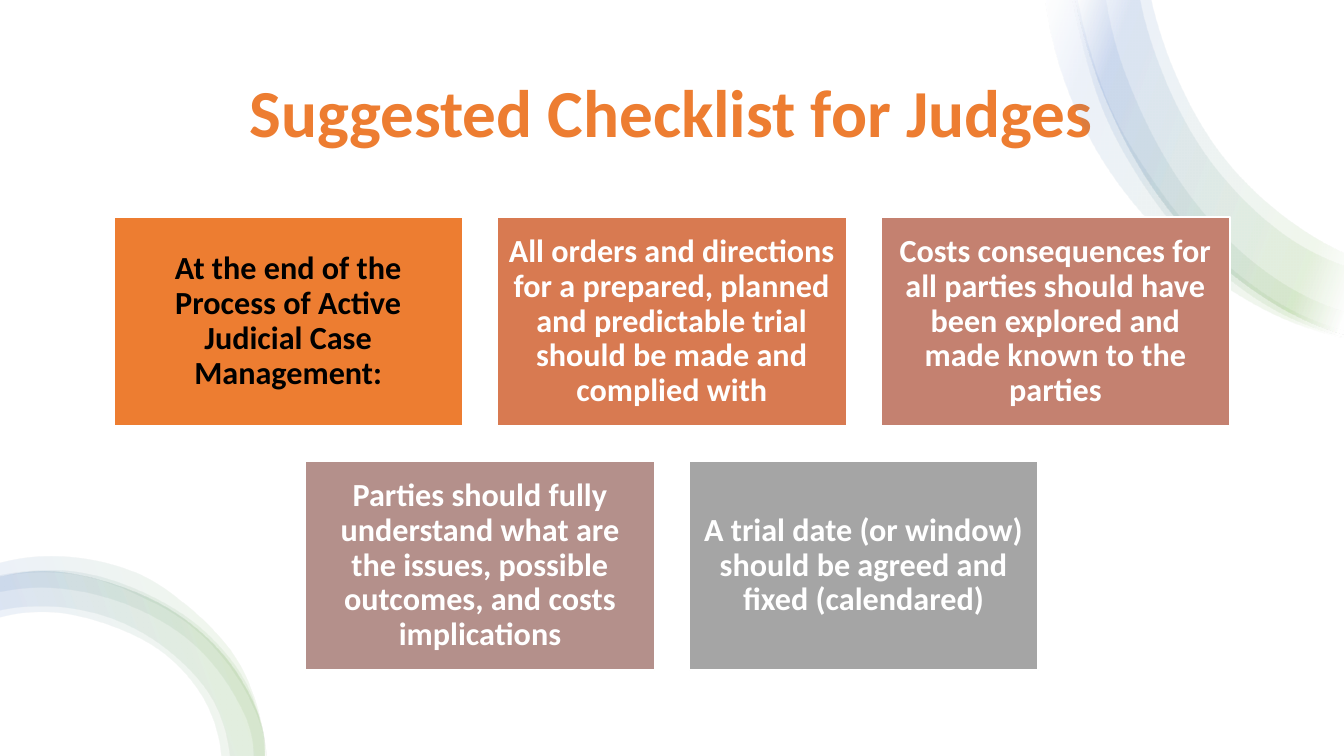
from lxml import etree
from pptx import Presentation
from pptx.dml.color import RGBColor
from pptx.enum.shapes import MSO_SHAPE
from pptx.enum.text import MSO_ANCHOR, PP_ALIGN
from pptx.oxml import parse_xml
from pptx.oxml.ns import nsdecls, qn
from pptx.util import Pt

WHITE = RGBColor(0xFF, 0xFF, 0xFF)
BLACK = RGBColor(0x00, 0x00, 0x00)
ORANGE = RGBColor(0xED, 0x7D, 0x31)
TERRACOTTA = RGBColor(0xD8, 0x7A, 0x51)
ROSE = RGBColor(0xC4, 0x81, 0x70)
MAUVE = RGBColor(0xB4, 0x90, 0x8B)
GREY = RGBColor(0xA5, 0xA5, 0xA5)
GREEN = RGBColor(0x70, 0xAD, 0x47)
BLUE = RGBColor(0x44, 0x72, 0xC4)

SLIDE_WIDTH, SLIDE_HEIGHT = 960, 540
CARD_WIDTH, CARD_HEIGHT, CARD_GAP = 249.1, 149.4, 24.9
CARDS_TOP = 155
BAND_STOPS = [(2, WHITE), (16, GREEN), (85, BLUE), (100, WHITE)]

# Each band is an outer edge and the inner edge that leads back, in points
CORNER_OUTER = [(960, 239), (942, 233), (881, 197), (830, 144), (792, 77), (768, 0)]
CORNER_BANDS = [
    ([(960, 241), (923, 230), (879, 207), (839, 176), (804, 138), (776, 94),
      (750, 19), (747, 0)],
     [(770, 0), (779, 37), (796, 83), (821, 125), (850, 163), (886, 197),
      (926, 223), (960, 236)]),
    (CORNER_OUTER, [(822, 0), (834, 40), (878, 118), (941, 171), (960, 181)]),
    ([(960, 240), (921, 226), (845, 168), (815, 129), (791, 86), (769, 14), (766, 0)],
     [(790, 0), (797, 32), (813, 75), (860, 152), (892, 184), (929, 209), (960, 222)]),
    (CORNER_OUTER, [(814, 0), (826, 42), (871, 124), (937, 180), (960, 190)]),
]
FOOT_OUTER = [(189, 540), (188.6, 529), (170, 482), (133, 443), (84, 418), (29, 408), (0, 412)]
FOOT_BANDS = [
    (FOOT_OUTER, [(0, 441), (29, 437), (77, 446), (120, 469), (148, 504), (158, 540)]),
    (FOOT_OUTER, [(0, 436), (29, 433), (78, 441), (122, 466), (153, 502), (164, 540)]),
    ([(189, 540), (186, 518), (178, 493), (146, 451), (102, 423), (50, 408),
      (22, 408), (0, 411)],
     [(0, 423), (24, 420), (48, 421), (73, 426), (96, 434), (138, 460), (168, 498),
      (178, 520), (181, 540)]),
    ([(190, 540), (189, 533), (180, 495), (168, 470), (151, 449), (130, 430),
      (107, 414), (51, 398), (22, 398), (0, 402)],
     [(0, 412), (23, 409), (50, 410), (76, 416), (100, 426), (123, 438), (144, 454),
      (162, 474), (176, 496), (186, 520), (189, 540)]),
]

CARD_ROWS = [
    [("At the end of the Process of Active Judicial Case Management:", ORANGE, BLACK),
     ("All orders and directions for a prepared, planned and predictable trial "
      "should be made and complied with", TERRACOTTA, WHITE),
     ("Costs consequences for all parties should have been explored and made known "
      "to the parties", ROSE, WHITE)],
    [("Parties should fully understand what are the issues, possible outcomes, "
      "and costs implications", MAUVE, WHITE),
     ("A trial date (or window) should be agreed and fixed (calendared)", GREY, WHITE)],
]


def bezier_points(edge):
    """Return two control points and an end point for each step along an edge."""
    knots = [complex(x, y) for x, y in edge]
    chords = [abs(end - start) for start, end in zip(knots, knots[1:])]
    slopes = [(end - start) / chord for start, end, chord in zip(knots, knots[1:], chords)]
    tangents = [(d2 * v1 + d1 * v2) / (d1 + d2)
                for d1, d2, v1, v2 in zip(chords, chords[1:], slopes, slopes[1:])]
    tangents = [2 * slopes[0] - tangents[0], *tangents, 2 * slopes[-1] - tangents[-1]]
    points = []
    for index, chord in enumerate(chords):
        points += [knots[index] + tangents[index] * chord / 3,
                   knots[index + 1] - tangents[index + 1] * chord / 3,
                   knots[index + 1]]
    return [(Pt(point.real), Pt(point.imag)) for point in points]


def curve_lines(lines):
    """Turn each three line steps of an outline into one cubic curve."""
    for first in range(0, len(lines), 3):
        curve = etree.Element(qn("a:cubicBezTo"))
        lines[first].addprevious(curve)
        for line in lines[first:first + 3]:
            curve.append(line[0])
            line.getparent().remove(line)


def write_text(shape, text, size, color, font="Calibri", bold=True, inset=7.2):
    frame = shape.text_frame
    frame.word_wrap = True
    frame.vertical_anchor = MSO_ANCHOR.MIDDLE
    frame.margin_left = frame.margin_right = Pt(inset)
    frame.margin_top = frame.margin_bottom = Pt(inset)
    paragraph = frame.paragraphs[0]
    paragraph.alignment = PP_ALIGN.CENTER
    paragraph.line_spacing = 0.9
    run = paragraph.add_run()
    run.text = text
    run.font.name = font
    run.font.size = Pt(size)
    run.font.bold = bold
    run.font.color.rgb = color


class SlideBuilder:
    def __init__(self, slide, text_size=23, title_size=48):
        self.slide = slide
        self.text_size = text_size
        self.title_size = title_size

    def rectangle(self, left, top, width, height, fill):
        shape = self.slide.shapes.add_shape(
            MSO_SHAPE.RECTANGLE, Pt(left), Pt(top), Pt(width), Pt(height))
        shape.shadow.inherit = False
        shape.fill.solid()
        shape.fill.fore_color.rgb = fill
        shape.line.fill.background()
        return shape

    def title(self, text, left, top, width, height):
        box = self.slide.shapes.add_textbox(Pt(left), Pt(top), Pt(width), Pt(height))
        write_text(box, text, self.title_size, ORANGE, inset=3.6)

    def card(self, text, left, top, fill, color):
        shape = self.rectangle(left, top, CARD_WIDTH, CARD_HEIGHT, fill)
        shape.line.color.rgb = WHITE
        shape.line.width = Pt(1)
        write_text(shape, text, self.text_size, color)

    def band(self, outer, inner, angle):
        (start_x, start_y), (turn_x, turn_y) = outer[0], inner[0]
        outer_points, inner_points = bezier_points(outer), bezier_points(inner)
        turn = (Pt(turn_x), Pt(turn_y))
        builder = self.slide.shapes.build_freeform(Pt(start_x), Pt(start_y))
        builder.add_line_segments(outer_points + [turn] + inner_points, close=True)
        shape = builder.convert_to_shape()
        shape.shadow.inherit = False
        shape.line.fill.background()
        # Curved edges
        geometry = shape.element.spPr.find(qn("a:custGeom"))
        lines = list(geometry.iter(qn("a:lnTo")))
        count = len(outer_points)
        curve_lines(lines[:count])
        curve_lines(lines[count + 1:count + 1 + len(inner_points)])
        # Translucent gradient
        stops = "".join(
            f'<a:gs pos="{position * 1000}"><a:srgbClr val="{color}">'
            f'<a:alpha val="10000"/></a:srgbClr></a:gs>'
            for position, color in BAND_STOPS)
        geometry.addnext(parse_xml(
            f'<a:gradFill {nsdecls("a")} rotWithShape="1"><a:gsLst>{stops}</a:gsLst>'
            f'<a:lin ang="{angle * 60000}" scaled="0"/></a:gradFill>'))


def main():
    presentation = Presentation()
    presentation.slide_width = Pt(SLIDE_WIDTH)
    presentation.slide_height = Pt(SLIDE_HEIGHT)
    slide = presentation.slides.add_slide(presentation.slide_layouts[6])
    builder = SlideBuilder(slide)

    # Backdrop and title
    builder.rectangle(0, 0, SLIDE_WIDTH, SLIDE_HEIGHT, WHITE)
    builder.title("Suggested Checklist for Judges", 63, 36, 833, 93.6)

    # Decorative bands
    for bands, angle in ((CORNER_BANDS, 200), (FOOT_BANDS, 160)):
        for outer, inner in bands:
            builder.band(outer, inner, angle)

    # Checklist cards, each row centred
    for row, cards in enumerate(CARD_ROWS):
        row_width = len(cards) * (CARD_WIDTH + CARD_GAP) - CARD_GAP
        top = CARDS_TOP + row * (CARD_HEIGHT + CARD_GAP)
        for column, (text, fill, color) in enumerate(cards):
            left = (SLIDE_WIDTH - row_width) / 2 + column * (CARD_WIDTH + CARD_GAP)
            builder.card(text, left, top, fill, color)

    presentation.save("out.pptx")


if __name__ == "__main__":
    main()
